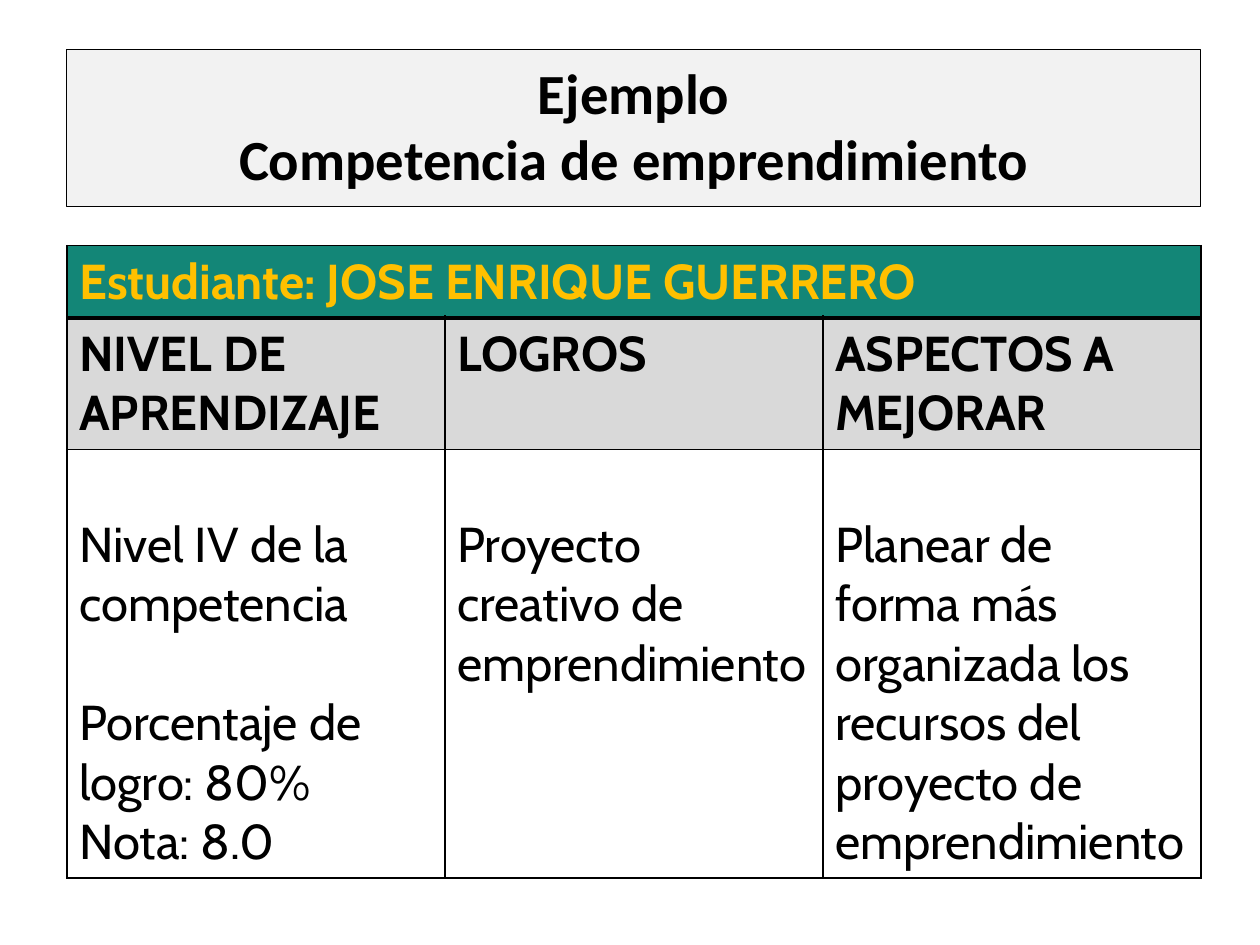
import lxml.etree
import pptx
import pptx.dml.color
import pptx.enum.shapes
import pptx.enum.text
import pptx.oxml.ns
import pptx.util
from pptx.util import Inches

BLACK = "000000"


def color(hex_code):
    return pptx.dml.color.RGBColor.from_string(hex_code)


def add_border(cell, side, points):
    """Draw a black line on one side (L, R, T or B) of a table cell."""
    qn = pptx.oxml.ns.qn
    properties = cell._tc.get_or_add_tcPr()
    line = lxml.etree.SubElement(
        properties, qn(f"a:ln{side}"), w=str(pptx.util.Pt(points))
    )
    fill = lxml.etree.SubElement(line, qn("a:solidFill"))
    lxml.etree.SubElement(fill, qn("a:srgbClr"), val=BLACK)


presentation = pptx.Presentation()
presentation.slide_width = Inches(10)
presentation.slide_height = Inches(7.5)
slide = presentation.slides.add_slide(presentation.slide_layouts[6])

# Title box
title = slide.shapes.add_shape(
    pptx.enum.shapes.MSO_SHAPE.RECTANGLE,
    Inches(0.53), Inches(0.39), Inches(9), Inches(1.25),
)
title.shadow.inherit = False
title.fill.solid()
title.fill.fore_color.rgb = color("F2F2F2")
title.line.color.rgb = color(BLACK)
title.line.width = pptx.util.Pt(0.75)
title.text_frame.vertical_anchor = pptx.enum.text.MSO_ANCHOR.MIDDLE
paragraph = title.text_frame.paragraphs[0]
paragraph.alignment = pptx.enum.text.PP_ALIGN.CENTER
paragraph.line_spacing = 0.97
for index, text in enumerate(["Ejemplo", "Competencia de emprendimiento"]):
    if index:
        paragraph.add_line_break()
    run = paragraph.add_run()
    run.text = text
    run.font.name = "Calibri"
    run.font.size = pptx.util.Pt(32.4)
    run.font.bold = True
    run.font.color.rgb = color(BLACK)

# Assessment table: each cell is a list of paragraphs
rows = [
    [["Estudiante: JOSE ENRIQUE GUERRERO"], [], []],
    [["NIVEL DE APRENDIZAJE"], ["LOGROS"], ["ASPECTOS A MEJORAR"]],
    [
        ["Nivel IV de la competencia", "Porcentaje de logro: 80%", "Nota: 8.0"],
        ["Proyecto creativo de emprendimiento"],
        ["Planear de forma más organizada los recursos del proyecto de "
         "emprendimiento"],
    ],
]
# Height, fill, text colour, bold, top inset, top border, bottom border
row_styles = [
    (0.57, "138677", "FFC000", True, 0.05, 1, 3),
    (1.03, "D9D9D9", BLACK, True, 0.05, 3, 1),
    (3.37, "FFFFFF", BLACK, False, 0.52, 1, 1),
]
table = slide.shapes.add_table(
    3, 3, Inches(0.53), Inches(1.95), Inches(9), Inches(4.97)
).table
table.first_row = False
table.horz_banding = False
for column in table.columns:
    column.width = Inches(3)
table.cell(0, 0).merge(table.cell(0, 2))

for row_index, (row, style) in enumerate(zip(rows, row_styles)):
    height, fill, text_color, bold, top_inset, top_line, bottom_line = style
    table.rows[row_index].height = Inches(height)
    for column_index, texts in enumerate(row):
        cell = table.cell(row_index, column_index)
        for side, points in zip("LRTB", (1, 1, top_line, bottom_line)):
            add_border(cell, side, points)
        cell.fill.solid()
        cell.fill.fore_color.rgb = color(fill)
        cell.margin_left = cell.margin_right = Inches(0.1)
        cell.margin_top = Inches(top_inset)
        cell.margin_bottom = Inches(0.05)
        for index, text in enumerate(texts):
            frame = cell.text_frame
            paragraph = frame.add_paragraph() if index else frame.paragraphs[0]
            if index == 1:
                paragraph.space_before = pptx.util.Pt(34)
            run = paragraph.add_run()
            run.text = text
            run.font.name = "Cabin"
            run.font.size = pptx.util.Pt(28)
            run.font.bold = bold
            run.font.color.rgb = color(text_color)

presentation.save("out.pptx")
